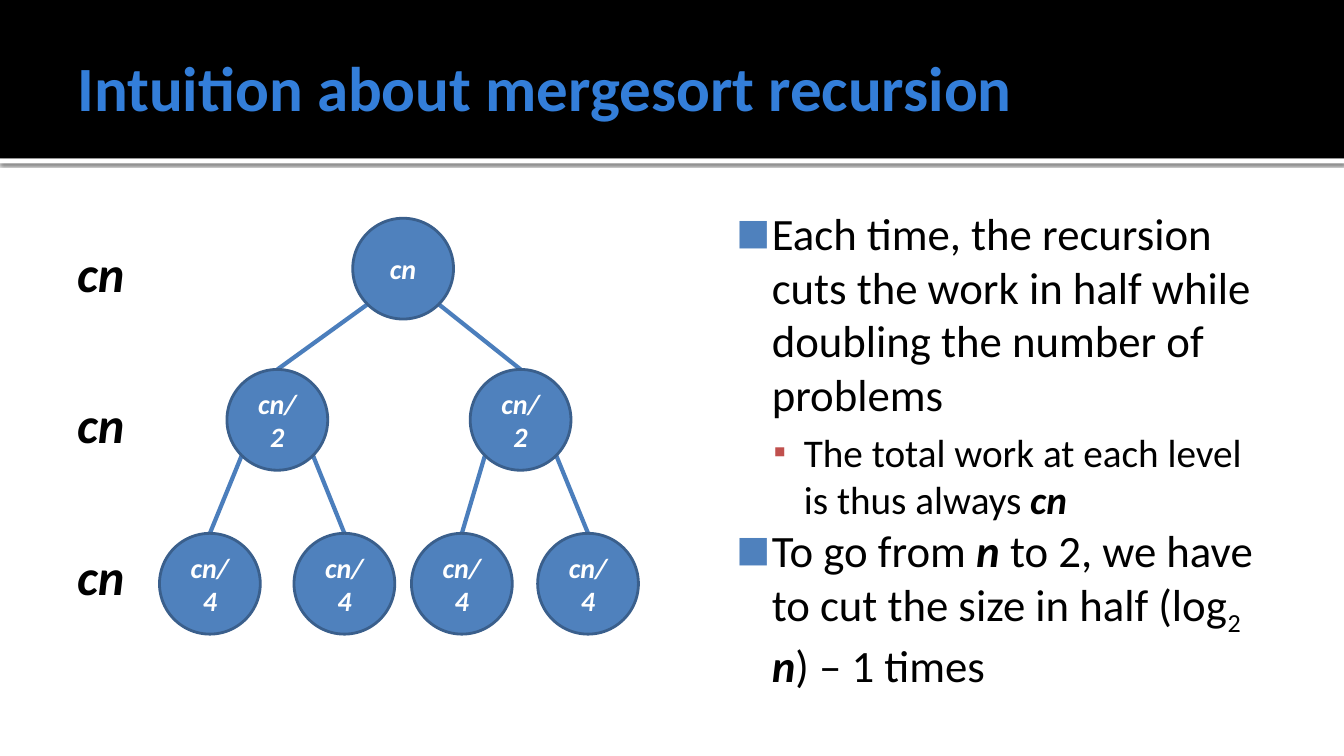
from lxml.etree import SubElement
from pptx import Presentation
from pptx.dml.color import RGBColor
from pptx.enum.shapes import MSO_CONNECTOR, MSO_SHAPE
from pptx.enum.text import MSO_ANCHOR, MSO_AUTO_SIZE, PP_ALIGN
from pptx.oxml.ns import qn
from pptx.util import Cm, Pt

BLACK = RGBColor(0x00, 0x00, 0x00)
WHITE = RGBColor(0xFF, 0xFF, 0xFF)
TITLE = RGBColor(0x33, 0x7E, 0xD9)
BLUE = RGBColor(0x4F, 0x81, 0xBD)
RED = RGBColor(0xC0, 0x50, 0x4D)
RIM = RGBColor(0x3A, 0x5F, 0x8C)
EDGE = RGBColor(0x4B, 0x7E, 0xBC)

WIDTH = 33.87
NODE = 2.54
DIAG = 0.5 ** 0.5
LEVELS = [
    ("cn", 5.5, [8.89]),
    ("cn/2", 9.31, [5.72, 11.85]),
    ("cn/4", 13.44, [4.02, 7.41, 10.37, 13.55]),
]
POINTS = [
    (0, [("Each time, the recursion cuts the work in half while "
          "doubling the number of problems", {})]),
    (1, [("The total work at each level is thus always ", {}),
         ("cn", {"strong": True})]),
    (0, [("To go from ", {}), ("n", {"strong": True}),
         (" to 2, we have to cut the size in half (log", {}),
         ("2 ", {"base": -25}), ("n", {"strong": True}),
         (") – 1 times", {})]),
]
STYLES = [
    {"size": 32, "left": 1.22, "hang": 0.89, "mark": "■", "color": BLUE,
     "scale": 80, "gap": 0},
    {"size": 28, "left": 2.03, "hang": 0.76, "mark": "▪", "color": RED,
     "scale": 90, "gap": 5.6},
]


def write(par, text, size, color=BLACK, bold=False, strong=False, base=0):
    run = par.add_run()
    run.text = text
    font = run.font
    font.name = "Calibri"
    font.size = Pt(size)
    font.bold = bold or strong
    font.italic = strong
    font.color.rgb = color
    if base:
        run._r.get_or_add_rPr().set("baseline", str(base * 1000))


def inset(frame, left, top, right, bottom):
    frame.margin_left, frame.margin_top = Cm(left), Cm(top)
    frame.margin_right, frame.margin_bottom = Cm(right), Cm(bottom)


def place(shape, left, top, width, height):
    shape.left, shape.top = Cm(left), Cm(top)
    shape.width, shape.height = Cm(width), Cm(height)


def add_box(slide, left, top, width, height):
    box = slide.shapes.add_textbox(Cm(left), Cm(top), Cm(width), Cm(height))
    box.text_frame.word_wrap = True
    return box.text_frame


def to_back(slide, shape):
    slide.shapes._spTree.insert(2, shape._element)


def add_bar(slide, top, height, color):
    bar = slide.shapes.add_shape(
        MSO_SHAPE.RECTANGLE, 0, Cm(top), Cm(WIDTH), Cm(height))
    bar.shadow.inherit = False
    bar.fill.solid()
    bar.fill.fore_color.rgb = color
    bar.line.fill.background()
    to_back(slide, bar)
    return bar


def add_shade(shape):
    effect = shape._element.spPr.find(qn("a:effectLst"))
    shade = SubElement(effect, qn("a:outerShdw"), blurRad=str(Pt(2.5)),
                       dist=str(Pt(0.8)), dir="5400000", rotWithShape="0")
    color = SubElement(shade, qn("a:srgbClr"), val=str(BLACK))
    SubElement(color, qn("a:alpha"), val="60000")


def add_title(slide, text):
    title = slide.shapes.title
    place(title, 1.7, 0.43, 30.48, 3.48)
    frame = title.text_frame
    frame.auto_size = MSO_AUTO_SIZE.NONE
    frame.vertical_anchor = MSO_ANCHOR.MIDDLE
    inset(frame, 0.25, 0.13, 0.13, 0.13)
    par = frame.paragraphs[0]
    par.alignment = PP_ALIGN.LEFT
    write(par, text, 45, color=TITLE, bold=True)


def add_node(slide, text, left, top):
    node = slide.shapes.add_shape(
        MSO_SHAPE.OVAL, Cm(left), Cm(top), Cm(NODE), Cm(NODE))
    node.shadow.inherit = False
    node.fill.solid()
    node.fill.fore_color.rgb = BLUE
    node.line.color.rgb = RIM
    node.line.width = Pt(2)
    frame = node.text_frame
    frame.word_wrap = True
    frame.vertical_anchor = MSO_ANCHOR.MIDDLE
    par = frame.paragraphs[0]
    par.alignment = PP_ALIGN.CENTER
    write(par, text, 20, color=WHITE, strong=True)
    return node


def add_edge(slide, top, low, side):
    half = top.width / 2
    x = int(top.left + half + side * half * DIAG)
    y = int(top.top + half + half * DIAG)
    edge = slide.shapes.add_connector(
        MSO_CONNECTOR.STRAIGHT, x, y, low.left + low.width // 2, low.top)
    edge.end_connect(low, 0)
    edge.line.color.rgb = EDGE
    edge.line.width = Pt(3)
    SubElement(edge._element.spPr, qn("a:effectLst"))
    to_back(slide, edge)


def add_tree(slide):
    rows = [[add_node(slide, text, left, top) for left in lefts]
            for text, top, lefts in LEVELS]
    for upper, lower in zip(rows, rows[1:]):
        for i, low in enumerate(lower):
            add_edge(slide, upper[i // 2], low, 1 if i % 2 else -1)


def add_costs(slide):
    frame = add_box(slide, 1.27, 5.97, 2.54, 9.5)
    for i in range(len(LEVELS)):
        par = frame.add_paragraph() if i else frame.paragraphs[0]
        par.alignment = PP_ALIGN.CENTER
        if i:
            par.space_before = Pt(65)
        write(par, "cn", 36, strong=True)


def add_mark(par, style):
    props = par._p.get_or_add_pPr()
    props.set("marL", str(Cm(style["left"])))
    props.set("indent", str(-Cm(style["hang"])))
    color = SubElement(props, qn("a:buClr"))
    SubElement(color, qn("a:srgbClr"), val=str(style["color"]))
    SubElement(props, qn("a:buSzPct"), val=str(style["scale"] * 1000))
    SubElement(props, qn("a:buFont"), typeface="Calibri")
    SubElement(props, qn("a:buChar"), char=style["mark"])


def add_points(slide):
    frame = add_box(slide, 18.08, 4.93, 14.07, 12.85)
    inset(frame, 0.15, 0.25, 0.25, 0.13)
    for i, (level, parts) in enumerate(POINTS):
        par = frame.add_paragraph() if i else frame.paragraphs[0]
        style = STYLES[level]
        par.level = level
        par.space_before = Pt(style["gap"])
        add_mark(par, style)
        for text, form in parts:
            write(par, text, style["size"], **form)


def main():
    deck = Presentation()
    deck.slide_width, deck.slide_height = Cm(WIDTH), Cm(19.05)
    slide = deck.slides.add_slide(deck.slide_layouts[5])
    add_title(slide, "Intuition about mergesort recursion")
    add_points(slide)
    add_tree(slide)
    add_costs(slide)
    add_bar(slide, 0, 3.99, BLACK)
    add_shade(add_bar(slide, 3.99, 0.13, WHITE))
    deck.save("out.pptx")


if __name__ == "__main__":
    main()
